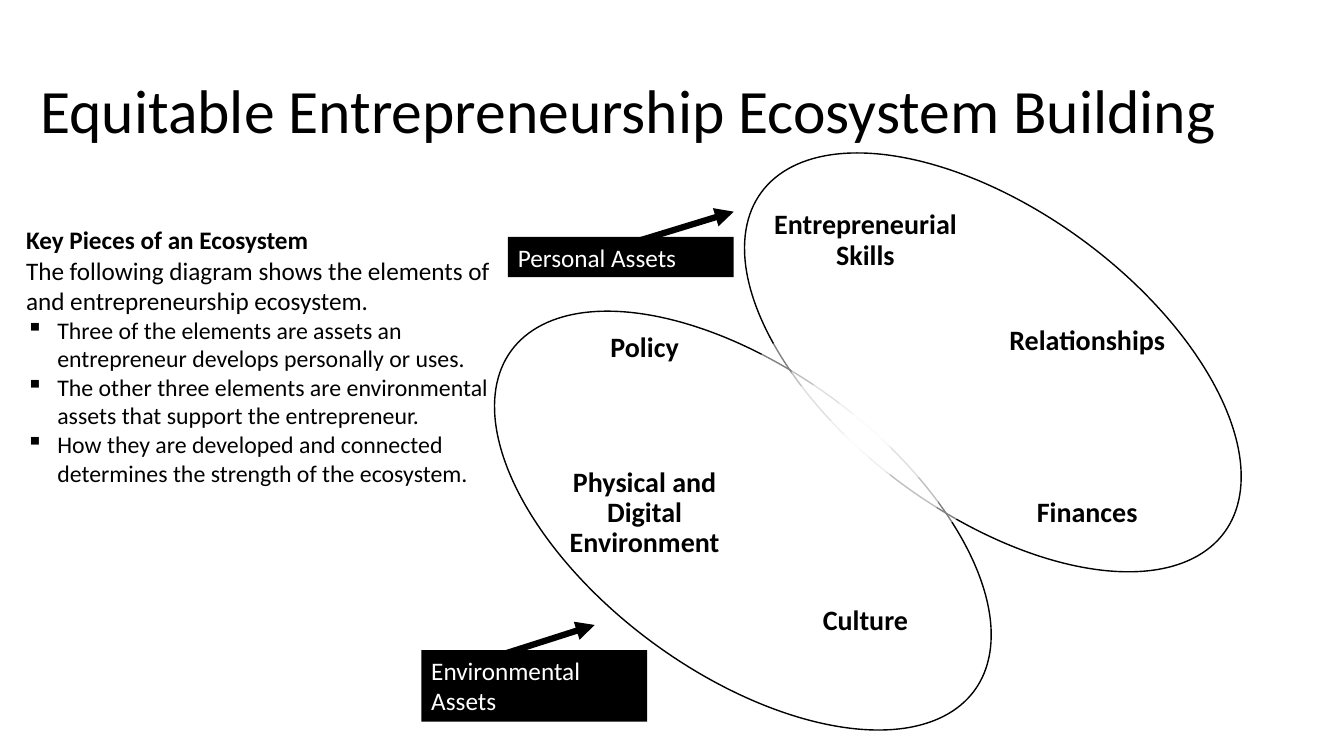
from math import cos, radians, sin

from lxml import etree
from pptx import Presentation
from pptx.dml.color import RGBColor
from pptx.enum.shapes import MSO_CONNECTOR, MSO_SHAPE
from pptx.enum.text import MSO_ANCHOR, PP_ALIGN
from pptx.oxml.ns import qn
from pptx.util import Inches, Pt

OVAL, RECT = MSO_SHAPE.OVAL, MSO_SHAPE.RECTANGLE
LINE = MSO_CONNECTOR.STRAIGHT
TOP, MID = MSO_ANCHOR.TOP, MSO_ANCHOR.MIDDLE
LEFT, CENTER = PP_ALIGN.LEFT, PP_ALIGN.CENTER
COLORS = {"ink": "000000", "paper": "FFFFFF"}
FONT = "Calibri"


def color(name):
    return RGBColor.from_string(COLORS[name])


class Board:
    """Draws on one slide; every place is in percent of its width and height."""

    def __init__(self, deck):
        self.deck = deck
        self.slide = deck.slides.add_slide(deck.slide_layouts[6])
        self.shapes = self.slide.shapes

    def place(self, *spots):
        """Turn alternating x and y percentages into lengths."""
        sides = self.deck.slide_width, self.deck.slide_height
        return [round(sides[i % 2] * spot / 100) for i, spot in enumerate(spots)]

    def say(self, frame, words, size, bold=False, ink="ink", align=LEFT,
            space=1.0, bullet=False, more=False):
        """Put one paragraph in the frame, after the others if more is set."""
        para = frame.add_paragraph() if more else frame.paragraphs[0]
        para.alignment = align
        para.line_spacing = space
        run = para.add_run()
        run.text = words
        font = run.font
        font.name, font.size, font.bold = FONT, Pt(size), bold
        font.color.rgb = color(ink)
        if bullet:
            props = para._p.get_or_add_pPr()
            props.set("marL", str(Inches(0.31)))
            props.set("indent", str(-Inches(0.31)))
            etree.SubElement(props, qn("a:buChar")).set("char", "▪")

    def box(self, spot, anchor=TOP, inset=True):
        frame = self.shapes.add_textbox(*self.place(*spot)).text_frame
        frame.word_wrap = True
        frame.vertical_anchor = anchor
        if not inset:
            frame.margin_left = frame.margin_right = 0
            frame.margin_top = frame.margin_bottom = 0
        return frame

    def label(self, words, spot):
        self.say(self.box(spot, MID, inset=False), words, 20, bold=True,
                 align=CENTER, space=0.9)

    def ring(self, spot):
        ring = self.shapes.add_shape(OVAL, *self.place(*spot))
        ring.shadow.inherit = False
        ring.rotation = 36.3
        ring.fill.background()
        ring.line.color.rgb = color("ink")
        ring.line.width = Pt(1)

    def solid(self, kind, spot, tint):
        shape = self.shapes.add_shape(kind, *self.place(*spot))
        shape.shadow.inherit = False
        shape.fill.solid()
        shape.fill.fore_color.rgb = color(tint)
        shape.line.fill.background()
        return shape

    def petal(self, spot):
        """Add a half-transparent white disc."""
        disc = self.solid(OVAL, spot, "paper")
        tint = disc._element.spPr.find(qn("a:solidFill"))[0]
        etree.SubElement(tint, qn("a:alpha")).set("val", "50000")

    def tag(self, words, spot):
        frame = self.solid(RECT, spot, "ink").text_frame
        frame.word_wrap = True
        frame.vertical_anchor = TOP
        self.say(frame, words, 18, ink="paper")

    def arrow(self, spot):
        arrow = self.shapes.add_connector(LINE, *self.place(*spot))
        arrow.line.color.rgb = color("ink")
        arrow.line.width = Pt(4.5)
        props = arrow._element.spPr
        tip = etree.SubElement(props.find(qn("a:ln")), qn("a:tailEnd"))
        tip.set("type", "triangle")
        etree.SubElement(props, qn("a:effectLst"))


RINGS = [(33.9, 48.8), (52.5, 27.87)]
LABELS = [
    ("Entrepreneurial Skills", (57.5, 25.2, 13.8, 13.33)),
    ("Relationships", (74.33, 37.87, 13.13, 14.67)),
    ("Finances", (74.33, 59.73, 13.13, 16.4)),
    ("Culture", (57.5, 75.47, 13.8, 13.33)),
    ("Physical and Digital Environment", (41.4, 59.73, 13.13, 16.4)),
    ("Policy", (41.4, 37.87, 13.13, 16.4)),
]
POINTS = [
    "Three of the elements are assets an entrepreneur develops personally or uses.",
    "The other three elements are environmental assets that support the entrepreneur.",
    "How they are developed and connected determines the strength of the ecosystem.",
]
TAGS = [
    ("Environmental Assets", (31.35, 86, 16.8, 9.47), (37.2, 86.67, 44.25, 82.67)),
    ("Personal Assets", (37.8, 31.33, 16.8, 5.33), (47.48, 31.87, 54.6, 28)),
]


def main():
    deck = Presentation()
    deck.slide_width, deck.slide_height = Inches(13.33), Inches(7.5)
    board = Board(deck)

    for x, y in RINGS:
        board.ring((x, y, 42.75, 40.13))
    title = board.box((2.25, 5.33, 90.9, 19.33), MID)
    board.say(title, "Equitable Entrepreneurship Ecosystem Building", 44, space=0.9)

    wide, high = 11.03, 19.6
    for i, (words, spot) in enumerate(LABELS):
        turn = radians(60 * i - 90)
        x, y = 64.4 + 4.13 * cos(turn), 57 + 7.33 * sin(turn)
        board.petal((x - wide / 2, y - high / 2, wide, high))
        board.label(words, spot)

    body = board.box((1.2, 29.07, 36.68, 55.87))
    board.say(body, "Key Pieces of an Ecosystem", 18, bold=True)
    board.say(body, "The following diagram shows the elements of and "
              "entrepreneurship ecosystem.", 18, more=True)
    for point in POINTS:
        board.say(body, point, 17, bullet=True, more=True)

    for words, spot, aim in TAGS:
        board.arrow(aim)
        board.tag(words, spot)
    deck.save("out.pptx")


if __name__ == "__main__":
    main()
